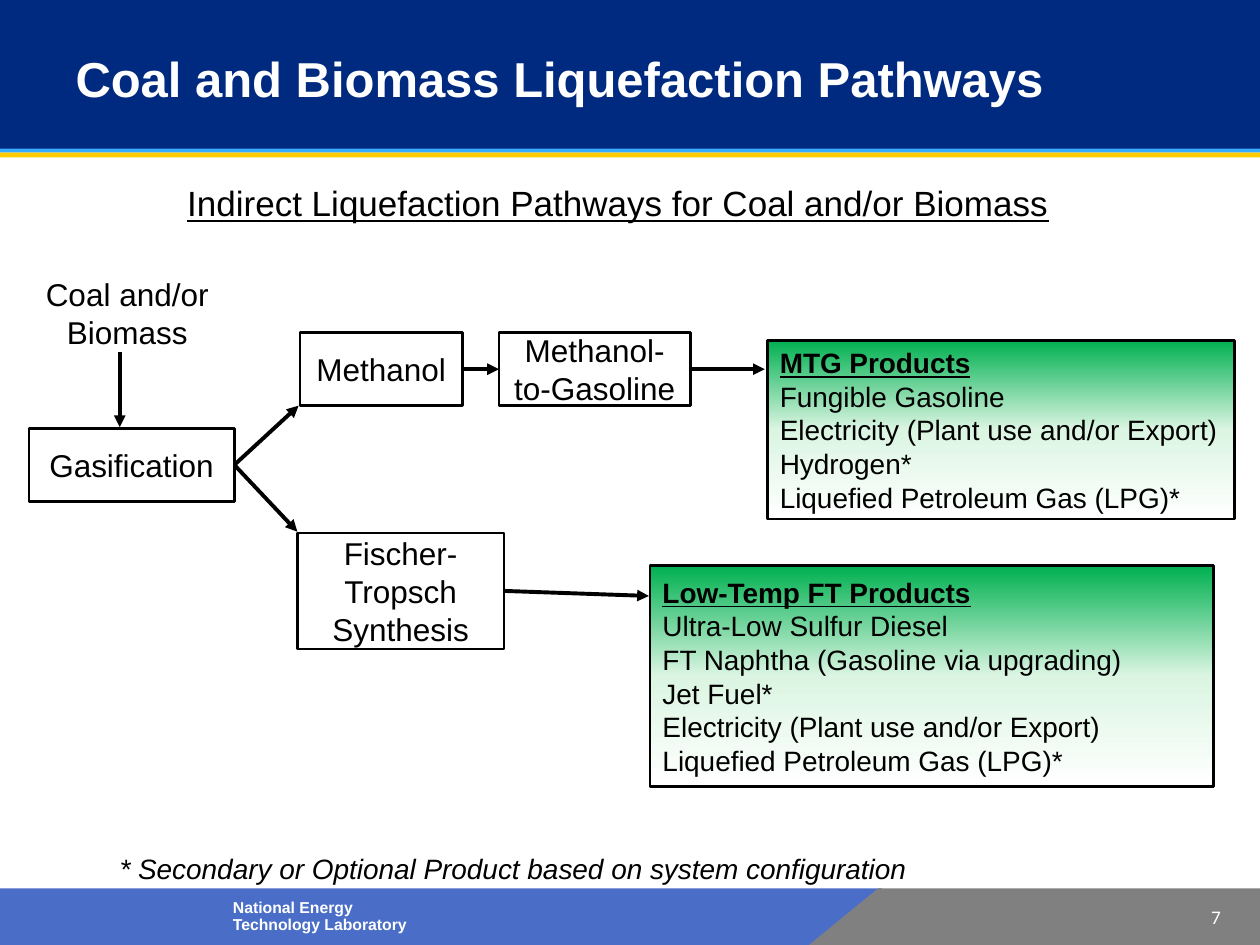
from copy import deepcopy
from dataclasses import dataclass

from pptx import Presentation
from pptx import util as u
from pptx.dml.color import RGBColor
from pptx.enum import shapes, text
from pptx.oxml.ns import qn
from pptx.oxml.xmlchemy import OxmlElement

COLUMNS, ROWS = 100, 75
WIDTH, HEIGHT = u.Inches(10), u.Inches(7.5)
TOP, LEFT, BOTTOM, RIGHT = range(4)


@dataclass(frozen=True)
class Theme:
    font: str = "Arial"
    number_font: str = "Calibri"
    ink: str = "000000"
    paper: str = "FFFFFF"
    navy: str = "002A7F"
    sky: str = "37ABFF"
    gold: str = "FECB00"
    blue: str = "4A6EC8"
    gray: str = "808080"
    product_stops: tuple = ((0, "00B050"), (0.5, "DBF5E2"), (1, "FFFFFF"))
    title: float = 28
    heading: float = 20
    step: float = 18
    product: float = 16
    number: float = 11
    footer: float = 9
    border: float = 1.5
    arrow: float = 2.25


THEME = Theme()


def point(column, row):
    return round(WIDTH * column / COLUMNS), round(HEIGHT * row / ROWS)


def color(value):
    return RGBColor.from_string(value)


def add_span(para, words, size, ink=THEME.ink, font=THEME.font, **style):
    span = para.add_run()
    span.text = words
    span.font.size = u.Pt(size)
    span.font.name = font
    span.font.color.rgb = color(ink)
    for name, value in style.items():
        setattr(span.font, name, value)


def write_lines(box, lines, size, align=text.PP_ALIGN.LEFT, first=None, **style):
    frame = box.text_frame
    frame.word_wrap = True
    frame.vertical_anchor = text.MSO_ANCHOR.MIDDLE
    for index, line in enumerate(lines):
        para = frame.add_paragraph() if index else frame.paragraphs[0]
        para.alignment = align
        extra = first if first and index == 0 else {}
        add_span(para, line, size, **style, **extra)


def add_block(page, place, fill=None, border=False, kind=shapes.MSO_SHAPE.RECTANGLE):
    box = page.shapes.add_shape(kind, *point(*place[:2]), *point(*place[2:]))
    box.shadow.inherit = False
    if fill:
        box.fill.solid()
        box.fill.fore_color.rgb = color(fill)
    else:
        box.fill.background()
    if border:
        box.line.color.rgb = color(THEME.ink)
        box.line.width = u.Pt(THEME.border)
    else:
        box.line.fill.background()
    return box


def add_step(page, place, *lines):
    box = add_block(page, place, border=True)
    write_lines(box, lines, THEME.step, text.PP_ALIGN.CENTER)
    return box


def add_caption(page, place, lines, size, **style):
    box = add_block(page, place, THEME.paper)
    write_lines(box, lines, size, text.PP_ALIGN.CENTER, **style)


def add_products(page, place, *lines):
    box = add_block(page, place, border=True)
    box.fill.gradient()
    box.fill.gradient_angle = 270
    stops = box.fill._xPr.find(qn("a:gradFill")).find(qn("a:gsLst"))
    stops.append(deepcopy(stops[-1]))
    for stop, (position, shade) in zip(box.fill.gradient_stops, THEME.product_stops):
        stop.position = position
        stop.color.rgb = color(shade)
    write_lines(box, lines, THEME.product, first={"bold": True, "underline": True})


def add_label(page, place, words, size, align=text.PP_ALIGN.LEFT, inset=(0.1, 0.05), **style):
    box = page.shapes.add_textbox(*point(*place[:2]), *point(*place[2:]))
    frame = box.text_frame
    frame.margin_left = frame.margin_right = u.Inches(inset[0])
    frame.margin_top = frame.margin_bottom = u.Inches(inset[1])
    write_lines(box, [words], size, align, **style)
    return box


def add_arrow(page, start, end, source=None, target=None):
    arrow = page.shapes.add_connector(
        shapes.MSO_CONNECTOR.STRAIGHT, *point(*start), *point(*end))
    if source:
        arrow.begin_connect(source, RIGHT)
    if target:
        arrow.end_connect(target, LEFT)
    arrow.line.color.rgb = color(THEME.ink)
    arrow.line.width = u.Pt(THEME.arrow)
    head = OxmlElement("a:tailEnd")
    head.set("type", "triangle")
    arrow.line._get_or_add_ln().append(head)
    arrow._element.spPr.append(OxmlElement("a:effectLst"))


def add_frame(page):
    add_block(page, (0, 70.5, 70, 4.5), THEME.blue)
    add_block(page, (69.7, 70.5, 30.3, 4.5), THEME.gray)
    slope = add_block(page, (64.2, 70.5, 5.5, 4.5), THEME.gray,
                      kind=shapes.MSO_SHAPE.ISOSCELES_TRIANGLE)
    slope.adjustments[0] = 1
    add_block(page, (0, 12.1, COLUMNS, 0.4), THEME.gold)
    add_block(page, (0, 11.3, COLUMNS, 0.8), THEME.sky)
    add_block(page, (0, 0, COLUMNS, 11.8), THEME.navy)
    add_label(page, (92.4, 71.8, 4.5, 1.9), "7", THEME.number, text.PP_ALIGN.RIGHT,
              (0, 0), ink=THEME.paper, font=THEME.number_font)
    footer = add_label(page, (17.5, 70.9, 17.8, 3.7), "National Energy Technology Laboratory",
                       THEME.footer, ink=THEME.paper, bold=True)
    footer.text_frame.paragraphs[0].line_spacing = 0.9
    add_label(page, (6, 3.3, 79, 5.7), "Coal and Biomass Liquefaction Pathways",
              THEME.title, inset=(0, 0.05), ink=THEME.paper, bold=True)


def add_pathways(page):
    add_caption(page, (12.4, 13.2, 73.3, 5.8),
                ["Indirect Liquefaction Pathways for Coal and/or Biomass"],
                THEME.heading, underline=True)
    add_caption(page, (2.1, 22.3, 16, 5.1), ["Coal and/or", "Biomass"], THEME.step)

    gasification = add_step(page, (2.3, 34, 16.3, 5.8), "Gasification")
    methanol = add_step(page, (23.8, 26.4, 12.9, 5.8), "Methanol")
    gasoline = add_step(page, (39.6, 26.4, 15.2, 5.8), "Methanol-to-Gasoline")
    synthesis = add_step(page, (23.6, 42.3, 16.4, 9.2), "Fischer-Tropsch Synthesis")

    add_products(page, (60.9, 27, 37.1, 14.2), "MTG Products", "Fungible Gasoline",
                 "Electricity (Plant use and/or Export)", "Hydrogen*",
                 "Liquefied Petroleum Gas (LPG)*")
    add_products(page, (51.6, 44.9, 44.7, 17.5), "Low-Temp FT Products",
                 "Ultra-Low Sulfur Diesel", "FT Naphtha (Gasoline via upgrading)",
                 "Jet Fuel*", "Electricity (Plant use and/or Export)",
                 "Liquefied Petroleum Gas (LPG)*")

    add_arrow(page, (9.5, 27.9), (9.5, 33.9))
    add_arrow(page, (18.6, 36.9), (23.7, 32.2), gasification)
    add_arrow(page, (18.6, 36.9), (23.6, 42.2), gasification)
    add_arrow(page, (36.7, 29.3), (39.6, 29.3), methanol, gasoline)
    add_arrow(page, (54.8, 29.3), (60.7, 29.3), gasoline)
    add_arrow(page, (40, 46.9), (51.5, 47.3), synthesis)

    note = add_label(page, (8.5, 67.1, 65.8, 3.7),
                     "* Secondary or Optional Product based on system configuration",
                     THEME.product, italic=True)
    note.text_frame.word_wrap = False


def main():
    deck = Presentation()
    deck.slide_width, deck.slide_height = WIDTH, HEIGHT
    page = deck.slides.add_slide(deck.slide_layouts[6])
    add_frame(page)
    add_pathways(page)
    deck.save("out.pptx")


if __name__ == "__main__":
    main()
